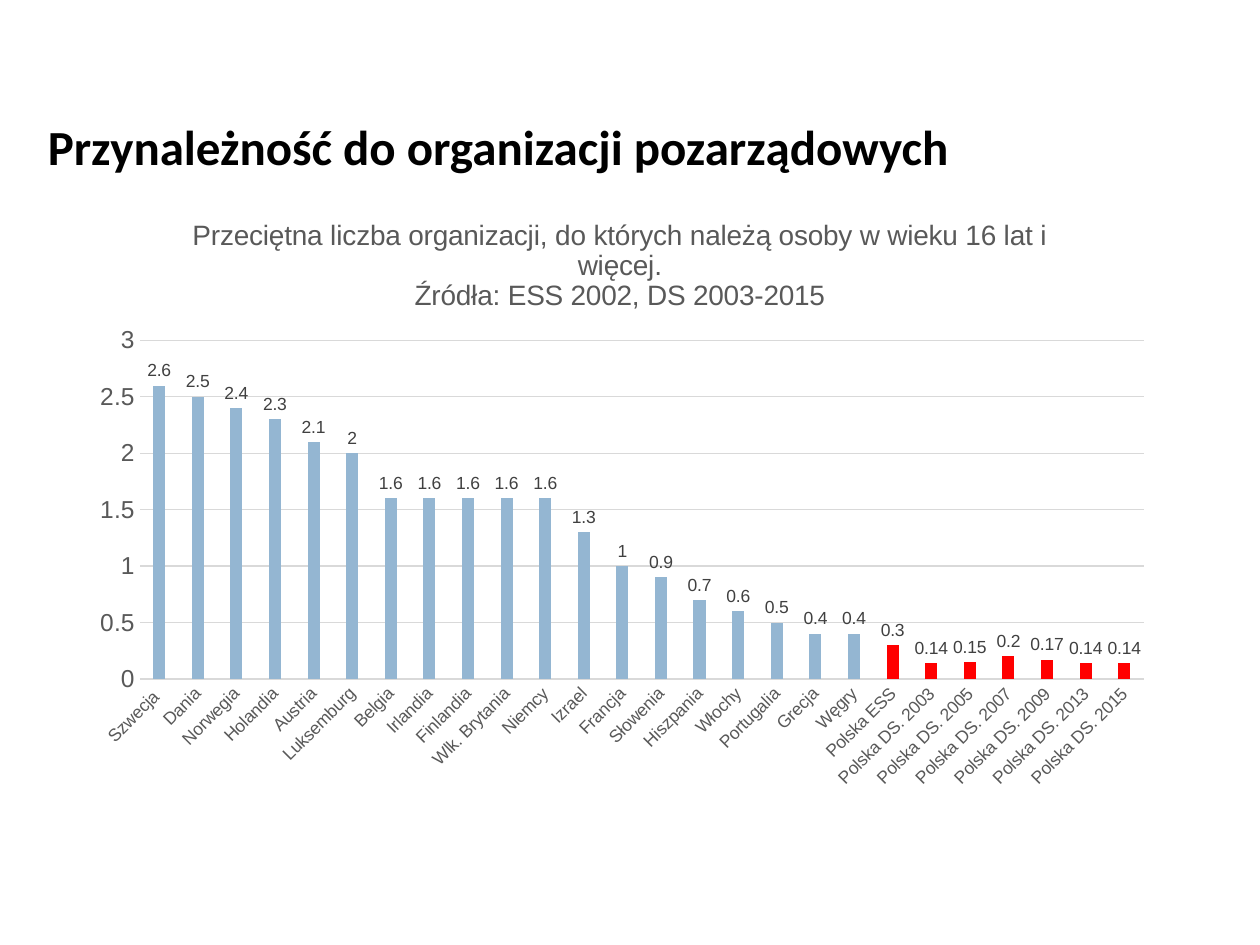
from lxml import etree
from pptx import Presentation
from pptx import util as u
from pptx.chart import data as chart_data
from pptx.dml.color import RGBColor
from pptx.enum import chart as ch, text as tx
from pptx.oxml import ns

COLORS = {
    "heading": "000000",
    "muted": "595959",
    "label": "404040",
    "rule": "D9D9D9",
    "europe": "94B6D2",
    "poland": "FF0000",
}

MEMBERSHIP = [
    ("Szwecja ", 2.6), ("Dania", 2.5), ("Norwegia", 2.4), ("Holandia", 2.3),
    ("Austria", 2.1), ("Luksemburg", 2), ("Belgia", 1.6), ("Irlandia", 1.6),
    ("Finlandia", 1.6), ("Wlk. Brytania", 1.6), ("Niemcy", 1.6),
    ("Izrael", 1.3), ("Francja", 1), ("Słowenia", 0.9), ("Hiszpania", 0.7),
    ("Włochy", 0.6), ("Portugalia", 0.5), ("Grecja", 0.4), ("Węgry", 0.4),
    ("Polska ESS", 0.3), ("Polska DS. 2003", 0.14), ("Polska DS. 2005", 0.15),
    ("Polska DS. 2007", 0.2), ("Polska DS. 2009", 0.17),
    ("Polska DS. 2013", 0.14), ("Polska DS. 2015", 0.14),
]

CAPTION = [
    "Przeciętna liczba organizacji, do których należą osoby w wieku 16 lat i więcej.",
    "Źródła: ESS 2002, DS 2003-2015",
]


class Deck:
    heading_font = "Calibri"
    chart_font = "Arial"

    def __init__(self):
        self.presentation = Presentation()
        self.presentation.slide_width = u.Inches(10)
        self.presentation.slide_height = u.Inches(7.5)
        layout = self.presentation.slide_layouts.get_by_name("Title Only")
        self.slide = self.presentation.slides.add_slide(layout)

    def style(self, font, size, color, name=chart_font, bold=False):
        font.name = name
        font.size = u.Pt(size)
        font.bold = bold
        font.color.rgb = RGBColor.from_string(COLORS[color])

    def rule(self, line):
        line.color.rgb = RGBColor.from_string(COLORS["rule"])
        line.width = u.Pt(0.75)

    def heading(self, wording, left, top, width, height):
        title = self.slide.shapes.title
        title.left, title.top = u.Inches(left), u.Inches(top)
        title.width, title.height = u.Inches(width), u.Inches(height)
        frame = title.text_frame
        frame.word_wrap = False
        frame.auto_size = tx.MSO_AUTO_SIZE.SHAPE_TO_FIT_TEXT
        paragraph = frame.paragraphs[0]
        paragraph.alignment = tx.PP_ALIGN.LEFT
        run = paragraph.add_run()
        run.text = wording
        self.style(run.font, 28, "heading", self.heading_font, True)

    def columns(self, rows, caption, left, top, width, height):
        data = chart_data.CategoryChartData()
        data.categories = [country for country, _ in rows]
        data.add_series("Series 1", [average for _, average in rows])
        chart = self.slide.shapes.add_chart(
            ch.XL_CHART_TYPE.COLUMN_CLUSTERED,
            u.Inches(left), u.Inches(top), u.Inches(width), u.Inches(height), data,
        ).chart
        self.style(chart.font, 10, "heading")
        chart.has_legend = False
        self.caption(chart, caption)
        self.axes(chart)
        self.bars(chart.plots[0], rows)
        self.place_plot(chart, x=0.06, y=0.24, w=0.92, h=0.56)

    def caption(self, chart, lines):
        chart.has_title = True
        chart.chart_title.include_in_layout = False
        frame = chart.chart_title.text_frame
        for index, wording in enumerate(lines):
            paragraph = frame.add_paragraph() if index else frame.paragraphs[0]
            run = paragraph.add_run()
            run.text = wording
            self.style(run.font, 16, "muted")

    def axes(self, chart):
        countries, averages = chart.category_axis, chart.value_axis
        for axis, size in ((countries, 10), (averages, 14)):
            axis.major_tick_mark = axis.minor_tick_mark = ch.XL_TICK_MARK.NONE
            self.style(axis.tick_labels.font, size, "muted")
        self.rule(countries.format.line)
        slant = countries._element.find(ns.qn("c:txPr")).find(ns.qn("a:bodyPr"))
        slant.set("rot", "-2700000")
        averages.minimum_scale, averages.maximum_scale = 0, 3
        averages.major_unit = 0.5
        averages.format.line.fill.background()
        averages.has_major_gridlines = True
        self.rule(averages.major_gridlines.format.line)

    def bars(self, plot, rows):
        plot.gap_width, plot.overlap = 219, -27
        plot.vary_by_categories = False
        series = plot.series[0]
        self.paint(series, "europe")
        for index, (country, _) in enumerate(rows):
            if country.startswith("Polska"):
                self.paint(series.points[index], "poland")
        labels = series.data_labels
        labels.show_value = True
        labels.position = ch.XL_LABEL_POSITION.OUTSIDE_END
        self.style(labels.font, 10, "label")

    def paint(self, bar, color):
        bar.format.fill.solid()
        bar.format.fill.fore_color.rgb = RGBColor.from_string(COLORS[color])

    def place_plot(self, chart, **box):
        area = chart._chartSpace.find(".//" + ns.qn("c:plotArea"))
        for automatic in area.findall(ns.qn("c:layout")):
            area.remove(automatic)
        layout = etree.Element(ns.qn("c:layout"))
        manual = etree.SubElement(layout, ns.qn("c:manualLayout"))
        settings = {"layoutTarget": "inner", "xMode": "edge", "yMode": "edge", **box}
        for tag, value in settings.items():
            etree.SubElement(manual, ns.qn("c:" + tag)).set("val", str(value))
        area.insert(0, layout)


def main():
    deck = Deck()
    deck.heading("Przynależność do organizacji pozarządowych", 0.28, 0.87, 7.43, 0.57)
    deck.columns(MEMBERSHIP, CAPTION, 0.59, 1.55, 8.66, 4.8)
    deck.presentation.save("out.pptx")


if __name__ == "__main__":
    main()
